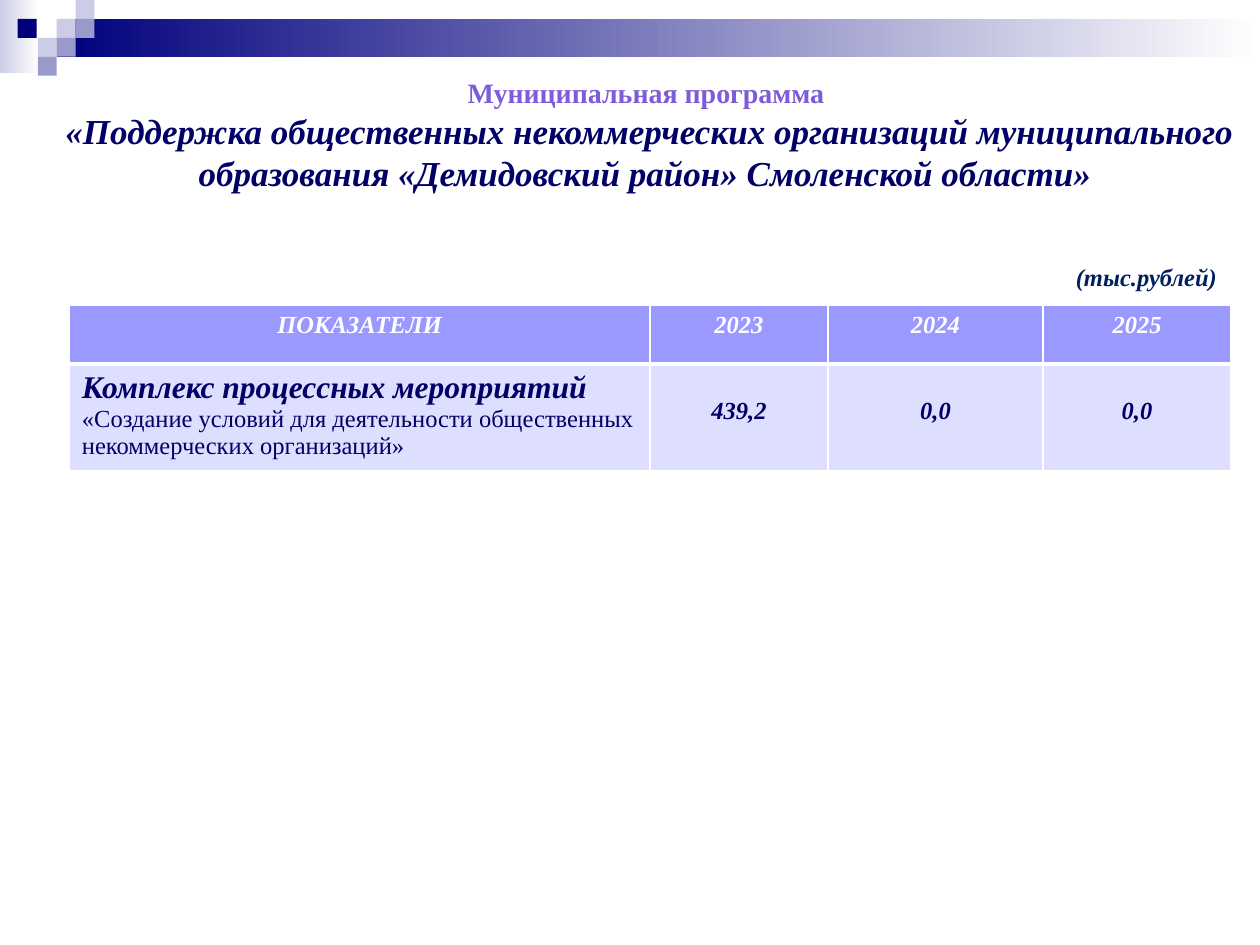
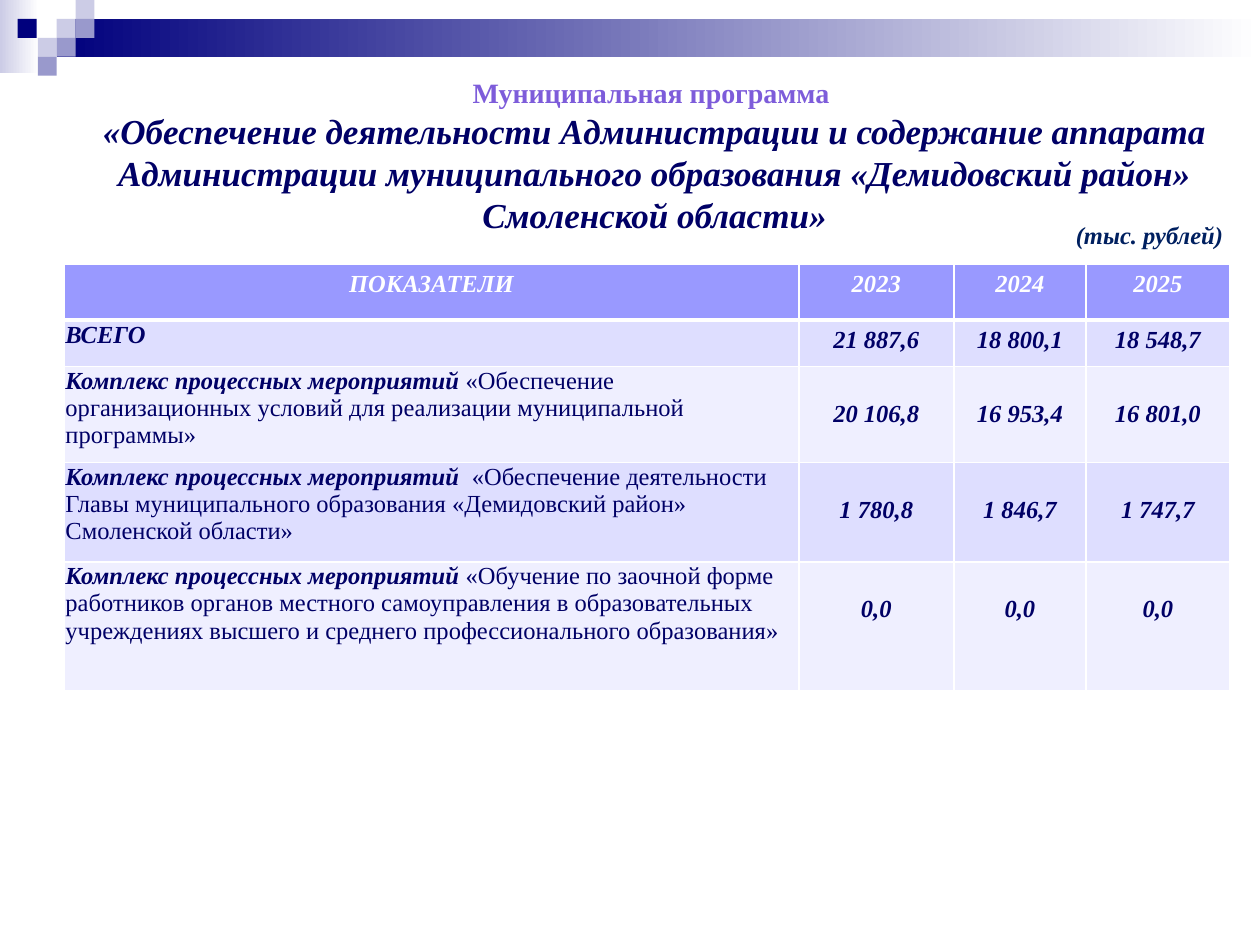
from dataclasses import dataclass

from lxml import etree
from pptx import Presentation
from pptx.dml.color import RGBColor
from pptx.enum.shapes import MSO_SHAPE
from pptx.enum.text import MSO_ANCHOR, MSO_AUTO_SIZE, PP_ALIGN
from pptx.oxml.ns import qn
from pptx.util import Emu, Pt

RECTANGLE = MSO_SHAPE.RECTANGLE
LEFT, CENTER = PP_ALIGN.LEFT, PP_ALIGN.CENTER
TOP = MSO_ANCHOR.TOP
FIXED_SIZE = MSO_AUTO_SIZE.NONE

EMU_PER_PX = 9144  # 100 px to the inch
TITLE_ONLY = 5


@dataclass(frozen=True)
class Theme:
    font: str = "Times New Roman"
    ink: str = "000066"
    kicker: str = "7D5CDA"
    unit: str = "002060"
    white: str = "FFFFFF"
    header: str = "9999FF"
    bands: tuple = ("DEDEFF", "EFEFFF")
    navy: str = "00007D"
    pale: str = "CCCCE6"
    mid: str = "9999CC"
    title_size: int = 20
    lead_size: int = 18
    kicker_size: int = 16
    text_size: int = 14


THEME = Theme()


def px(length):
    return Emu(length * EMU_PER_PX)


def add_span(para, text, *, size=THEME.text_size, color=THEME.ink, bold=True, italic=True):
    span = para.add_run()
    span.text = text
    font = span.font
    font.name, font.size = THEME.font, Pt(size)
    font.bold, font.italic = bold, italic
    font.color.rgb = RGBColor.from_string(color)


def add_borders(cell, bottom):
    """Outline a cell in white; the bottom line has its own width in points."""
    properties = cell._tc.get_or_add_tcPr()
    for side, width in (("L", 1), ("R", 1), ("T", 1), ("B", bottom)):
        line = etree.SubElement(properties, qn(f"a:ln{side}"), w=str(Pt(width)))
        fill = etree.SubElement(line, qn("a:solidFill"))
        etree.SubElement(fill, qn("a:srgbClr"), val=THEME.white)


class DeckBuilder:
    def __init__(self, theme):
        self.theme = theme
        self.deck = Presentation()
        self.deck.slide_width, self.deck.slide_height = px(1000), px(750)
        self.layout = self.deck.slide_layouts[TITLE_ONLY]
        self.page = None

    def add_page(self):
        self.page = self.deck.slides.add_slide(self.layout)
        if len(self.deck.slides) == 1:
            self.decorate_layout()

    def add_block(self, left, top, width, height, color, fade=False):
        box = self.page.shapes.add_shape(RECTANGLE, px(left), px(top), px(width), px(height))
        box.shadow.inherit = False
        box.line.fill.background()
        if fade:
            box.fill.gradient()
            box.fill.gradient_angle = 0
            for stop, position, shade in zip(box.fill.gradient_stops, (0, 1),
                                             (color, self.theme.white)):
                stop.position = position
                stop.color.rgb = RGBColor.from_string(shade)
        else:
            box.fill.solid()
            box.fill.fore_color.rgb = RGBColor.from_string(color)
        return box

    def decorate_layout(self):
        """Draw the top band and its squares, then move them to the shared layout."""
        theme = self.theme
        blocks = [
            self.add_block(0, 0, 31, 58, theme.pale, fade=True),
            self.add_block(45, 15, 955, 30, theme.navy, fade=True),
        ]
        squares = (
            (45, 15, theme.pale), (60, 0, theme.pale), (60, 15, theme.mid),
            (30, 30, theme.pale), (14, 15, theme.navy), (45, 30, theme.mid),
            (30, 45, theme.mid),
        )
        blocks += [self.add_block(left, top, 15, 15, color) for left, top, color in squares]
        for number, block in enumerate(blocks, start=100):
            block.element.nvSpPr.cNvPr.id = number
            self.layout.shapes.element.append(block.element)

    def add_title(self, text, left, height):
        theme = self.theme
        title = self.page.shapes.title
        title.left, title.top, title.width, title.height = px(left), px(55), px(969), px(height)
        frame = title.text_frame
        frame.auto_size = FIXED_SIZE
        frame.vertical_anchor = TOP
        kicker, name = frame.paragraphs[0], frame.add_paragraph()
        kicker.alignment = name.alignment = CENTER
        add_span(kicker, "Муниципальная программа ", size=theme.kicker_size,
                 color=theme.kicker, italic=False)
        add_span(name, text, size=theme.title_size)

    def add_unit(self, text, top, width):
        box = self.page.shapes.add_textbox(px(844), px(top), px(width), px(34))
        box.text_frame.word_wrap = True
        add_span(box.text_frame.paragraphs[0], text, color=self.theme.unit)

    def fill_cell(self, cell, spans, fill, align=CENTER, bottom=1):
        """Write (text, format) spans into a bordered, filled cell."""
        add_borders(cell, bottom)
        cell.fill.solid()
        cell.fill.fore_color.rgb = RGBColor.from_string(fill)
        para = cell.text_frame.paragraphs[0]
        para.alignment = align
        for text, style in spans:
            add_span(para, text, **style)

    def add_table(self, left, top, widths, heights, rows, lead_size, label_margins=None):
        """Each row is (lead, detail, values); rows with a detail have lowered values."""
        theme = self.theme
        table = self.page.shapes.add_table(
            len(heights), len(widths), px(left), px(top),
            px(sum(widths)), px(sum(heights))).table
        table.horz_banding = False
        for column, width in zip(table.columns, widths):
            column.width = px(width)
        for row, height in zip(table.rows, heights):
            row.height = px(height)

        for column, text in enumerate(("ПОКАЗАТЕЛИ", "2023", "2024", "2025")):
            self.fill_cell(table.cell(0, column), [(text, {"color": theme.white})],
                           theme.header, bottom=3)

        for number, (lead, detail, values) in enumerate(rows, start=1):
            fill = theme.bands[(number - 1) % 2]
            label = table.cell(number, 0)
            spans = [(lead, {"size": lead_size})]
            if detail:
                spans.append((detail, {"bold": False, "italic": False}))
            self.fill_cell(label, spans, fill, align=LEFT)
            if label_margins:
                (label.margin_left, label.margin_top,
                 label.margin_right, label.margin_bottom) = map(px, label_margins)
            for column, value in enumerate(values, start=1):
                cell = table.cell(number, column)
                self.fill_cell(cell, [(value, {})], fill)
                if detail:
                    cell.margin_top = px(27)


def main():
    builder = DeckBuilder(THEME)
    activities = "Комплекс процессных мероприятий "

    builder.add_page()
    builder.add_title("«Поддержка общественных некоммерческих организаций муниципального "
                      "образования «Демидовский район» Смоленской области» ", 31, 104)
    builder.add_table(
        55, 242, (461, 141, 171, 149), (47, 85),
        [(activities,
          "«Создание условий для деятельности общественных некоммерческих организаций»",
          ("439,2", "0,0", "0,0"))],
        lead_size=THEME.lead_size)
    builder.add_unit("(тыс.рублей)", 203, 133)

    builder.add_page()
    builder.add_title("«Обеспечение деятельности Администрации и содержание аппарата "
                      "Администрации муниципального образования «Демидовский район» "
                      "Смоленской области»", 35, 138)
    builder.add_table(
        51, 210, (583, 123, 105, 114), (44, 37, 76, 79, 102),
        [("ВСЕГО", "", ("21 887,6", "18 800,1", "18 548,7")),
         (activities,
          "«Обеспечение организационных условий для реализации муниципальной программы»",
          ("20 106,8", "16 953,4", "16 801,0")),
         (activities,
          " «Обеспечение деятельности Главы муниципального образования "
          "«Демидовский район» Смоленской области»",
          ("1 780,8", "1 846,7", "1 747,7")),
         (activities,
          "«Обучение по заочной форме работников органов местного самоуправления в "
          "образовательных учреждениях высшего и среднего профессионального образования»",
          ("0,0", "0,0", "0,0"))],
        lead_size=THEME.text_size, label_margins=(1, 1, 1, 0))
    builder.add_unit("(тыс. рублей)", 170, 144)

    builder.deck.save("out.pptx")


if __name__ == "__main__":
    main()
